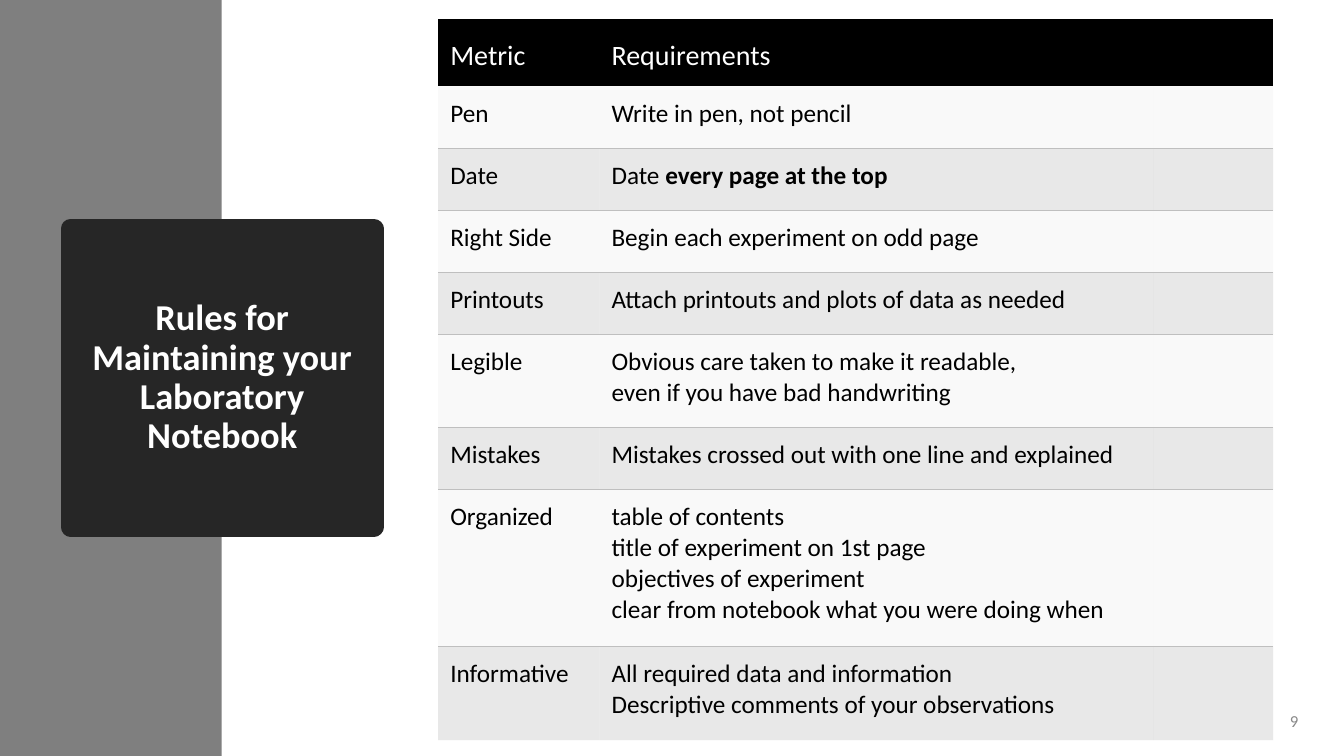
from lxml import etree
from pptx import Presentation
from pptx.dml.color import RGBColor
from pptx.enum.shapes import MSO_SHAPE
from pptx.enum.text import MSO_ANCHOR, PP_ALIGN
from pptx.oxml.ns import qn
from pptx.util import Pt

RECTANGLE = MSO_SHAPE.RECTANGLE
TOP, MIDDLE = MSO_ANCHOR.TOP, MSO_ANCHOR.MIDDLE
LEFT, CENTER, RIGHT = PP_ALIGN.LEFT, PP_ALIGN.CENTER, PP_ALIGN.RIGHT
PLAIN_TABLE = "{2D5ABB26-0587-4C30-8999-92F81FD0307C}"
COLORS = {
    "white": "FFFFFF", "black": "000000", "side": "7F7F7F", "title": "262626",
    "number": "898989", "light": "F2F2F2", "band": "BFBFBF",
}
ALPHA = {"light": 45, "band": 35}
RULES = [
    ("Pen", "Write in pen, not pencil", 44.3),
    ("Date", "Date every page at the top", 44.3),
    ("Right Side", "Begin each experiment on odd page", 44.3),
    ("Printouts", "Attach printouts and plots of data as needed", 44.3),
    ("Legible", "Obvious care taken to make it readable,\neven if you have bad handwriting", 66.7),
    ("Mistakes", "Mistakes crossed out with one line and explained", 44.3),
    ("Organized", "table of contents\ntitle of experiment on 1st page\nobjectives of experiment\n"
     "clear from notebook what you were doing when", 112.2),
    ("Informative", "All required data and information\nDescriptive comments of your observations", 66.7),
]
EMPHASIS = "every page at the top"


class NotebookSlide:
    """Draws the elements of one slide in a shared style."""

    def __init__(self, slide, font="Calibri"):
        self.slide = slide
        self.font = font

    def color(self, name):
        return RGBColor.from_string(COLORS[name])

    def style_text(self, frame, size, color, align=LEFT, bold=False):
        for paragraph in frame.paragraphs:
            paragraph.alignment = align
            for run in paragraph.runs:
                run.font.name = self.font
                run.font.size = Pt(size)
                run.font.bold = bold
                run.font.color.rgb = self.color(color)

    def panel(self, left, top, width, height, color, outline=0):
        panel = self.slide.shapes.add_shape(RECTANGLE, Pt(left), Pt(top), Pt(width), Pt(height))
        panel.shadow.inherit = False
        panel.fill.solid()
        panel.fill.fore_color.rgb = self.color(color)
        if outline:
            panel.line.color.rgb = self.color(color)
            panel.line.width = Pt(outline)
            etree.SubElement(panel.line._get_or_add_ln(), qn("a:round"))
        else:
            panel.line.fill.background()
        return panel

    def title(self, text, left, top, width, height):
        frame = self.panel(left, top, width, height, "title", 13.75).text_frame
        frame.text = text
        frame.word_wrap = True
        frame.vertical_anchor = MIDDLE
        frame.paragraphs[0].line_spacing = 0.9
        self.style_text(frame, 26, "white", CENTER, True)

    def page_number(self, text, left, top, width, height):
        frame = self.slide.shapes.add_textbox(Pt(left), Pt(top), Pt(width), Pt(height)).text_frame
        frame.text = text
        frame.word_wrap = True
        frame.vertical_anchor = MIDDLE
        frame.paragraphs[0].space_after = Pt(6)
        self.style_text(frame, 12, "number", RIGHT)

    def cell(self, cell, text, size, color, fill, anchor=TOP, edge=None):
        cell.margin_left = cell.margin_right = cell.margin_top = Pt(8.64)
        cell.margin_bottom = Pt(4.32)
        cell.vertical_anchor = anchor
        cell.fill.solid()
        cell.fill.fore_color.rgb = self.color(fill)
        properties = cell._tc.get_or_add_tcPr()
        if fill in ALPHA:
            shade = properties.find(qn("a:solidFill"))[0]
            etree.SubElement(shade, qn("a:alpha"), val=str(ALPHA[fill] * 1000))
        if edge:
            border = etree.Element(qn(edge), w=str(Pt(1)))
            line_fill = etree.SubElement(border, qn("a:solidFill"))
            etree.SubElement(line_fill, qn("a:srgbClr"), val=COLORS["band"])
            properties.insert(0, border)
        cell.text_frame.text = text
        self.style_text(cell.text_frame, size, color)

    def emphasize(self, cell, phrase):
        paragraph = cell.text_frame.paragraphs[0]
        lead = paragraph.runs[0]
        lead.text = lead.text.removesuffix(phrase)
        paragraph.add_run().text = phrase
        self.style_text(cell.text_frame, 18, "black")
        paragraph.runs[-1].font.bold = True

    def rules_table(self, left, top, widths, header_height):
        heights = [header_height] + [height for _, _, height in RULES]
        table = self.slide.shapes.add_table(
            len(heights), len(widths), Pt(left), Pt(top), Pt(sum(widths)), Pt(sum(heights))).table
        table.horz_banding = False
        table._tbl.tblPr.find(qn("a:tableStyleId")).text = PLAIN_TABLE
        for column, width in zip(table.columns, widths):
            column.width = Pt(width)
        for row, height in zip(table.rows, heights):
            row.height = Pt(height)
        for index, heading in enumerate(("Metric", "Requirements", "")):
            self.cell(table.cell(0, index), heading, 20, "white", "black", MIDDLE)
        for number, (metric, requirement, _) in enumerate(RULES, 1):
            fill, edge = ("light", "a:lnB") if number % 2 else ("band", "a:lnT")
            for index, text in enumerate((metric, requirement, "")):
                self.cell(table.cell(number, index), text, 18, "black", fill, edge=edge)
            if requirement.endswith(EMPHASIS):
                self.emphasize(table.cell(number, 1), EMPHASIS)


def main():
    deck = Presentation()
    deck.slide_width, deck.slide_height = Pt(960), Pt(540)
    page = NotebookSlide(deck.slides.add_slide(deck.slide_layouts[6]))
    page.panel(0, 0, 158.4, 540, "side")
    page.title("Rules for Maintaining your Laboratory Notebook", 50.4, 163.4, 216.7, 213.1)
    page.page_number("9", 890.6, 500.4, 43.9, 28.8)
    page.rules_table(313, 13.7, (115.2, 396, 85.2), 48)
    deck.save("out.pptx")


if __name__ == "__main__":
    main()
